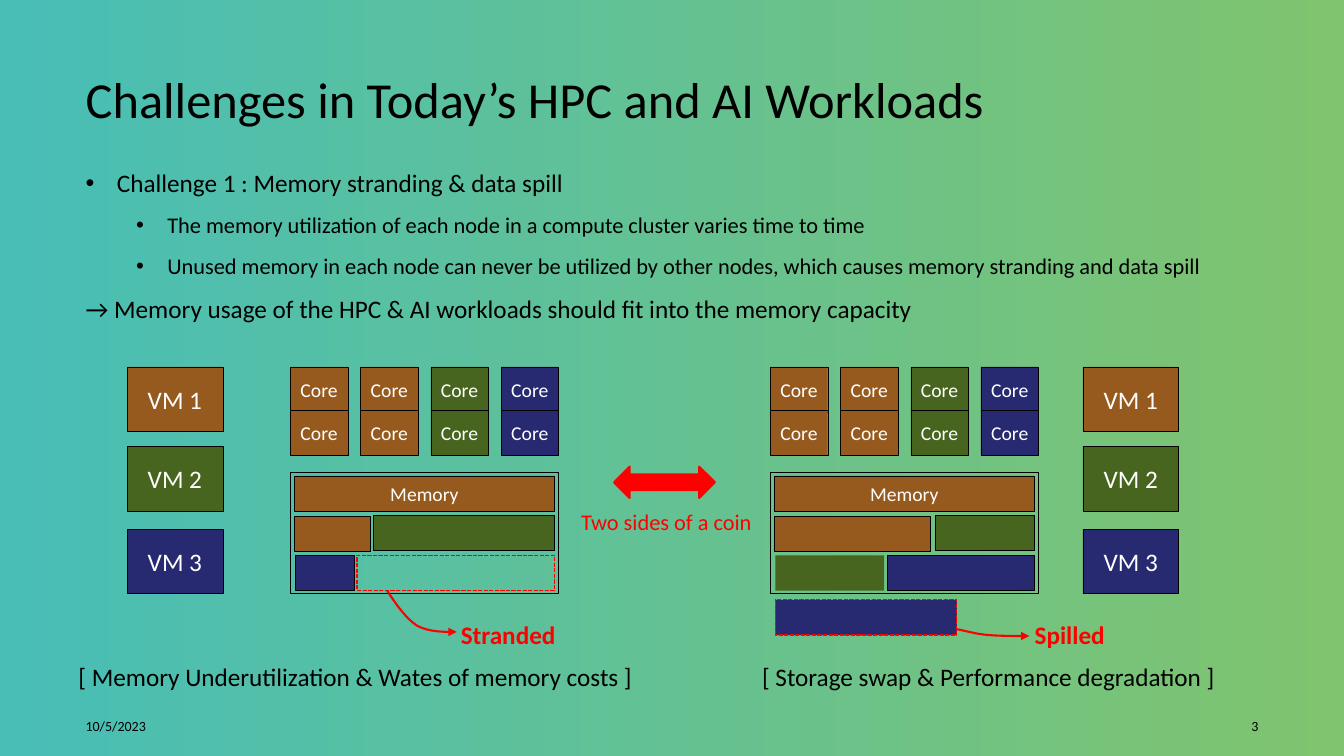
from lxml import etree
from pptx import Presentation
from pptx import util as u
from pptx.dml.color import RGBColor
from pptx.enum import dml, shapes, text
from pptx.oxml.ns import qn

FONT = "Calibri"
COLORS = {
    "teal": "48BEB7", "lime": "80C46E", "brown": "96591E", "green": "47651E",
    "navy": "272A70", "red": "FF0000", "black": "000000", "white": "FFFFFF",
}
VM_ROWS = [("VM 1", 3.64, "brown"), ("VM 2", 4.43, "green"), ("VM 3", 5.25, "navy")]
CORE_COLUMNS = ["brown", "brown", "green", "navy"]
CORE_WIDTH = 0.57
NODE_WIDTH = 2.66
BLOCK_HEIGHT = 0.35
BODY_LINES = [
    ("Challenge 1 : Memory stranding & data spill", 0, 18, 0.31),
    ("The memory utilization of each node in a compute cluster varies time to time", 1, 16, 0.81),
    ("Unused memory in each node can never be utilized by other nodes, "
     "which causes memory stranding and data spill", 1, 16, 0.81),
    ("→ Memory usage of the HPC & AI workloads should fit into the memory capacity", 0, 18, None),
]
LEFT_BLOCKS = [
    (0.04, 5.12, 0.75, "brown", "black"),
    (0.82, 5.11, 1.8, "green", "black"),
    (0.05, 5.51, 0.58, "navy", "black"),
    (0.66, 5.51, 1.96, None, "red"),
]
RIGHT_BLOCKS = [
    (0.04, 5.12, 1.55, "brown", "black"),
    (1.64, 5.11, 0.98, "green", "black"),
    (0.05, 5.51, 1.08, "green", None),
    (1.16, 5.51, 1.46, "navy", "black"),
    (0.05, 5.95, 1.8, "navy", "red"),
]
STRANDED_CURVE = [
    [(3.84, 5.86), (3.93, 6.0), (4.03, 6.14), (4.14, 6.21)],
    [(4.14, 6.21), (4.26, 6.27), (4.39, 6.27), (4.53, 6.27)],
]
SPILLED_CURVE = [
    [(9.48, 6.24), (9.58, 6.26), (9.68, 6.29), (9.8, 6.3)],
    [(9.8, 6.3), (9.92, 6.31), (10.06, 6.31), (10.21, 6.31)],
]


def rgb(name):
    return RGBColor.from_string(COLORS[name])


def place(shape, left, top, width, height):
    shape.left, shape.top = u.Inches(left), u.Inches(top)
    shape.width, shape.height = u.Inches(width), u.Inches(height)


def style(para, size, color, align, bold=False):
    para.alignment = align
    para.font.name = FONT
    para.font.size = u.Pt(size)
    para.font.bold = bold
    para.font.color.rgb = rgb(color)


def paint_background(page):
    fill = page.background.fill
    fill.gradient()
    fill.gradient_angle = 0
    for stop, color, position in zip(fill.gradient_stops, ("teal", "lime"), (0, 1)):
        stop.color.rgb = rgb(color)
        stop.position = position


def add_title(page, words):
    title = page.shapes.title
    place(title, 0.75, 0.43, 11.83, 1.09)
    frame = title.text_frame
    frame.text = words
    frame.auto_size = text.MSO_AUTO_SIZE.NONE
    frame.vertical_anchor = text.MSO_ANCHOR.MIDDLE
    style(frame.paragraphs[0], 36, "black", text.PP_ALIGN.LEFT)


def add_body(page):
    body = page.placeholders[1]
    place(body, 0.75, 1.61, 11.83, 1.64)
    frame = body.text_frame
    frame.text = "\n".join(line[0] for line in BODY_LINES)
    frame.auto_size = text.MSO_AUTO_SIZE.NONE
    for para, (_, level, size, margin) in zip(frame.paragraphs, BODY_LINES):
        para.level = level
        props = para._p.get_or_add_pPr()
        props.set("marL", str(u.Inches(margin or 0)))
        props.set("indent", str(u.Inches(-0.31 if margin else 0)))
        if margin:
            etree.SubElement(props, qn("a:buFont"), typeface="Arial")
            etree.SubElement(props, qn("a:buChar"), char="•")
        else:
            etree.SubElement(props, qn("a:buNone"))
        para.space_before = u.Pt(0)
        para.space_after = u.Pt(10)
        style(para, size, "black", text.PP_ALIGN.LEFT)


def add_label(page, words, spot, size, color="black", align=text.PP_ALIGN.LEFT,
              bold=False, wrap=True, anchor=text.MSO_ANCHOR.TOP):
    box = page.shapes.add_textbox(*map(u.Inches, spot))
    frame = box.text_frame
    frame.text = words
    frame.word_wrap = wrap
    frame.vertical_anchor = anchor
    style(frame.paragraphs[0], size, color, align, bold)


def add_block(page, spot, fill, line="black", words="", size=18, side=0.1,
              preset=shapes.MSO_SHAPE.RECTANGLE):
    block = page.shapes.add_shape(preset, *map(u.Inches, spot))
    block.shadow.inherit = False
    if fill:
        block.fill.solid()
        block.fill.fore_color.rgb = rgb(fill)
    else:
        block.fill.background()
    if line:
        block.line.color.rgb = rgb(line)
        block.line.width = u.Pt(0.25)
    else:
        block.line.fill.background()
    if words:
        frame = block.text_frame
        frame.text = words
        frame.margin_left = frame.margin_right = u.Inches(side)
        frame.vertical_anchor = text.MSO_ANCHOR.MIDDLE
        style(frame.paragraphs[0], size, "white", text.PP_ALIGN.CENTER)
    return block


def add_machines(page, left):
    for name, top, color in VM_ROWS:
        add_block(page, (left, top, 0.95, 0.64), color, words=name)


def add_node(page, left, blocks):
    pitch = (NODE_WIDTH - CORE_WIDTH) / (len(CORE_COLUMNS) - 1)
    for column, color in enumerate(CORE_COLUMNS):
        for top in (3.64, 4.07):
            add_block(page, (left + column * pitch, top, CORE_WIDTH, 0.45), color,
                      words="Core", size=14, side=0)
    add_block(page, (left, 4.68, NODE_WIDTH, 1.21), None)
    add_block(page, (left + 0.04, 4.72, 2.58, BLOCK_HEIGHT), "brown", words="Memory", size=14)
    for offset, top, width, fill, line in blocks:
        block = add_block(page, (left + offset, top, width, BLOCK_HEIGHT), fill, line)
        if line == "red":
            block.line.width = u.Pt(1)
            block.line.dash_style = dml.MSO_LINE.SQUARE_DOT


def bezier_point(controls, t):
    weights = ((1 - t) ** 3, 3 * t * (1 - t) ** 2, 3 * t * t * (1 - t), t ** 3)
    return tuple(sum(w * value for w, value in zip(weights, axis)) for axis in zip(*controls))


def add_curved_arrow(page, curve, steps=8):
    points = [bezier_point(piece, step / steps) for piece in curve for step in range(1, steps + 1)]
    start = curve[0][0]
    builder = page.shapes.build_freeform(*map(u.Inches, start))
    builder.add_line_segments([tuple(map(u.Inches, point)) for point in points], close=False)
    arrow = builder.convert_to_shape()
    arrow.shadow.inherit = False
    arrow.fill.background()
    arrow.line.color.rgb = rgb("red")
    arrow.line.width = u.Pt(1.5)
    etree.SubElement(arrow.line._get_or_add_ln(), qn("a:tailEnd"), type="triangle")


def main():
    deck = Presentation()
    deck.slide_width, deck.slide_height = u.Inches(13.33), u.Inches(7.5)
    page = deck.slides.add_slide(deck.slide_layouts[1])
    center, right = text.PP_ALIGN.CENTER, text.PP_ALIGN.RIGHT
    middle = text.MSO_ANCHOR.MIDDLE
    paint_background(page)
    add_title(page, "Challenges in Today’s HPC and AI Workloads")
    add_body(page)
    add_label(page, "10/5/2023", (0.75, 7.03, 1.75, 0.35), 10, anchor=middle)
    add_label(page, "3", (11.98, 7.03, 0.6, 0.35), 10, align=right, anchor=middle)
    for left in (1.26, 10.74):
        add_machines(page, left)
    add_node(page, 2.88, LEFT_BLOCKS)
    add_node(page, 7.64, RIGHT_BLOCKS)
    for words, left, curve in (("Stranded", 4.4, STRANDED_CURVE), ("Spilled", 9.97, SPILLED_CURVE)):
        add_label(page, words, (left, 6.09, 1.28, 0.4), 18, "red", center, bold=True)
        add_curved_arrow(page, curve)
    coin = add_block(page, (6.09, 4.63, 1, 0.31), "red", "red",
                     preset=shapes.MSO_SHAPE.LEFT_RIGHT_ARROW)
    coin.line.width = u.Pt(1.5)
    add_label(page, "Two sides of a coin", (5.63, 4.99, 1.96, 0.37), 16, "red", center)
    add_label(page, "[ Memory Underutilization & Wates of memory costs ]",
              (0.68, 6.51, 5.76, 0.4), 18, wrap=False)
    add_label(page, "[ Storage swap & Performance degradation ]",
              (7.46, 6.51, 4.74, 0.4), 18, wrap=False)
    deck.save("out.pptx")


if __name__ == "__main__":
    main()
